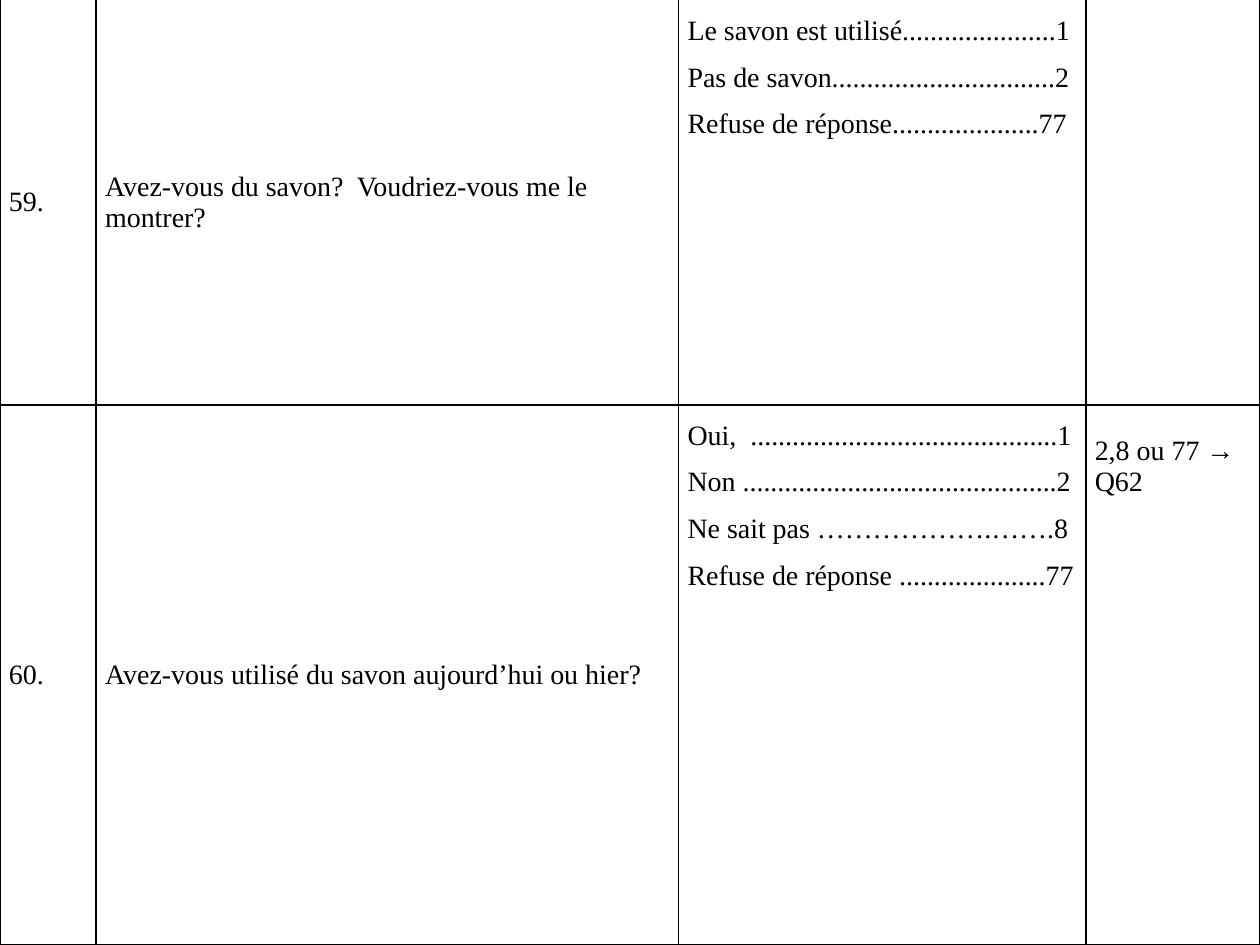
from dataclasses import dataclass

from lxml.etree import SubElement
from pptx import Presentation
from pptx.dml.color import RGBColor
from pptx.enum.text import MSO_VERTICAL_ANCHOR as Anchor
from pptx.oxml.ns import qn
from pptx.table import _Cell as Cell
from pptx.util import Cm, Length, Pt


@dataclass(frozen=True)
class Theme:
    background: RGBColor = RGBColor(0x0F, 0x56, 0xDC)
    paper: RGBColor = RGBColor(0xFF, 0xFF, 0xFF)
    ink: RGBColor = RGBColor(0, 0, 0)
    font: str = "Times New Roman"
    text_size: Length = Pt(16)
    border: Length = Pt(1)


@dataclass(frozen=True)
class Entry:
    lines: tuple[str, ...] = ()
    anchor: Anchor = Anchor.TOP
    spacing: float = 1.0
    top: Length = Cm(0)


@dataclass(frozen=True)
class Question:
    number: str
    wording: str
    answers: tuple[str, ...]
    skip: tuple[str, ...]
    height: Length
    sides: str

    def entries(self) -> tuple[Entry, ...]:
        return (
            Entry((self.number,), Anchor.MIDDLE),
            Entry((self.wording,), Anchor.MIDDLE),
            Entry(self.answers, spacing=1.5),
            Entry(self.skip, top=Cm(0.62)),
        )


THEME = Theme()
COLUMN_WIDTHS = (Cm(1.94), Cm(11.74), Cm(8.21), Cm(3.51))
QUESTIONS = (
    Question(
        "59.",
        "Avez-vous du savon?  Voudriez-vous me le montrer?",
        (
            "Le savon est utilisé......................1",
            "Pas de savon................................2",
            "Refuse de réponse.....................77",
        ),
        (),
        Cm(8.16),
        "LRB",
    ),
    Question(
        "60.",
        "Avez-vous utilisé du savon aujourd’hui ou hier?",
        (
            "Oui,  ............................................1",
            "Non .............................................2",
            "Ne sait pas ……………….…….8",
            "Refuse de réponse .....................77",
        ),
        ("2,8 ou 77 → Q62",),
        Cm(10.89),
        "LRTB",
    ),
)


def draw_borders(cell: Cell, sides: str) -> None:
    """Border lines must precede the fill in the cell properties."""
    properties = cell._tc.get_or_add_tcPr()
    for position, side in enumerate(sides):
        line = SubElement(properties, qn(f"a:ln{side}"), w=str(THEME.border))
        fill = SubElement(line, qn("a:solidFill"))
        SubElement(fill, qn("a:srgbClr"), val=str(THEME.ink))
        properties.insert(position, line)


def fill_cell(cell: Cell, entry: Entry, sides: str) -> None:
    cell.fill.solid()
    cell.fill.fore_color.rgb = THEME.paper
    cell_format = {
        "margin_left": Cm(0.18),
        "margin_right": Cm(0.18),
        "margin_top": entry.top,
        "margin_bottom": Cm(0),
        "vertical_anchor": entry.anchor,
    }
    for attribute, value in cell_format.items():
        setattr(cell, attribute, value)

    cell.text_frame.text = "\n".join(entry.lines)
    for paragraph in cell.text_frame.paragraphs:
        paragraph.line_spacing = entry.spacing
        for font in (paragraph.font, *(run.font for run in paragraph.runs)):
            font_format = {"name": THEME.font, "size": THEME.text_size, "bold": False}
            for attribute, value in font_format.items():
                setattr(font, attribute, value)
            font.color.rgb = THEME.ink
    draw_borders(cell, sides)


def main() -> None:
    # Slide
    deck = Presentation()
    deck.slide_width, deck.slide_height = Cm(25.4), Cm(19.05)
    slide = deck.slides.add_slide(deck.slide_layouts[6])
    slide.background.fill.solid()
    slide.background.fill.fore_color.rgb = THEME.background

    # Questionnaire grid
    questionnaire = slide.shapes.add_table(
        len(QUESTIONS), len(COLUMN_WIDTHS), 0, 0, deck.slide_width, deck.slide_height
    ).table
    for attribute in ("first_row", "horz_banding"):
        setattr(questionnaire, attribute, False)
    for column, width in zip(questionnaire.columns, COLUMN_WIDTHS):
        column.width = width

    # Questions
    for row, question in zip(questionnaire.rows, QUESTIONS):
        row.height = question.height
        for cell, entry in zip(row.cells, question.entries()):
            fill_cell(cell, entry, question.sides)

    deck.save("out.pptx")


if __name__ == "__main__":
    main()
